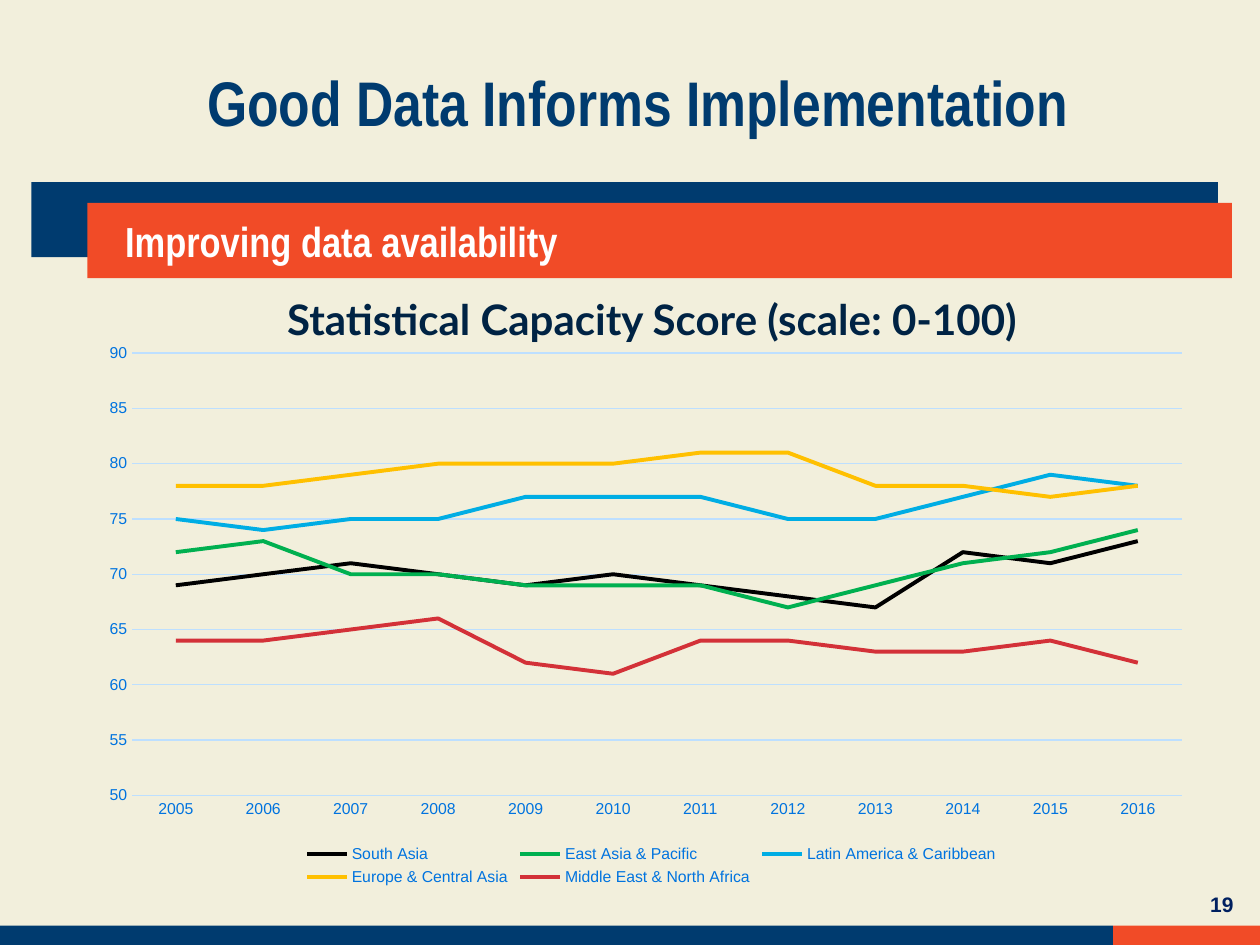
import pptx
import pptx.util
import pptx.chart.data
import pptx.dml.color
import pptx.enum.chart
import pptx.enum.shapes
import pptx.enum.text
import pptx.oxml

Pt = pptx.util.Pt
Align = pptx.enum.text.PP_ALIGN
NAVY, RED, INK, BLUE, PALE = "003B6F", "F14B27", "002344", "0073DF", "BDDFFF"


def rgb(code):
    return pptx.dml.color.RGBColor.from_string(code)


def write(shape, text, face, size, color, align):
    frame = shape.text_frame
    frame.word_wrap = True
    frame.auto_size = pptx.enum.text.MSO_AUTO_SIZE.NONE
    frame.vertical_anchor = pptx.enum.text.MSO_ANCHOR.MIDDLE
    frame.text = text
    para = frame.paragraphs[0]
    para.alignment = align
    font = para.font
    font.name, font.size, font.bold = face, Pt(size), True
    font.color.rgb = rgb(color)


deck = pptx.Presentation()
deck.slide_width, deck.slide_height = Pt(720), Pt(540)
slide = deck.slides.add_slide(deck.slide_layouts[5])
slide.background.fill.solid()
slide.background.fill.fore_color.rgb = rgb("F2EFDC")
shapes = slide.shapes

# Footer and heading bars
bars = []
for left, top, width, height, color in [
    (0, 529, 636, 11, NAVY),
    (636, 529, 84, 11, RED),
    (18, 104, 678, 43, NAVY),
    (50, 116, 654, 43, RED),
]:
    bar = shapes.add_shape(pptx.enum.shapes.MSO_SHAPE.RECTANGLE,
                           Pt(left), Pt(top), Pt(width), Pt(height))
    bar.shadow.inherit = False
    bar.fill.solid()
    bar.fill.fore_color.rgb = rgb(color)
    bar.line.fill.background()
    bars.append(bar)
banner = bars[-1]
write(banner, "Improving data availability", "Arial Narrow", 24, "FFFFFF", Align.LEFT)
banner.text_frame.margin_left = Pt(21.5)

title = shapes.title
title.left, title.top, title.width, title.height = Pt(50), Pt(29), Pt(629), Pt(58)
write(title, "Good Data Informs Implementation", "Arial Narrow", 36, NAVY, Align.CENTER)

# Chart
data = pptx.chart.data.CategoryChartData()
data.categories = [str(year) for year in range(2005, 2017)]
lines = [
    ("South Asia", "000000", [69, 70, 71, 70, 69, 70, 69, 68, 67, 72, 71, 73]),
    ("East Asia & Pacific", "00B050", [72, 73, 70, 70, 69, 69, 69, 67, 69, 71, 72, 74]),
    ("Latin America & Caribbean", "00ADE4", [75, 74, 75, 75, 77, 77, 77, 75, 75, 77, 79, 78]),
    ("Europe & Central Asia", "FFC000", [78, 78, 79, 80, 80, 80, 81, 81, 78, 78, 77, 78]),
    ("Middle East & North Africa", "D33138", [64, 64, 65, 66, 62, 61, 64, 64, 63, 63, 64, 62]),
]
for name, color, scores in lines:
    data.add_series(name, scores)
chart = shapes.add_chart(pptx.enum.chart.XL_CHART_TYPE.LINE,
                         Pt(50), Pt(189), Pt(638), Pt(320), data).chart
chart.has_title = False
chart.font.name, chart.font.size = "Arial", Pt(10)
chart.font.color.rgb = rgb(INK)
for series, (name, color, scores) in zip(chart.plots[0].series, lines):
    series.smooth = False
    series.marker.style = pptx.enum.chart.XL_MARKER_STYLE.NONE
    series.format.line.width = Pt(2.25)
    series.format.line.color.rgb = rgb(color)

years, scale = chart.category_axis, chart.value_axis
scale.minimum_scale, scale.maximum_scale, scale.major_unit = 50, 90, 5
scale.has_major_gridlines = True
scale.format.line.fill.background()
for rule in (years.format.line, scale.major_gridlines.format.line):
    rule.color.rgb = rgb(PALE)
    rule.width = Pt(0.75)
for axis in (years, scale):
    axis.major_tick_mark = axis.minor_tick_mark = pptx.enum.chart.XL_TICK_MARK.NONE

chart.has_legend = True
legend = chart.legend
legend.position = pptx.enum.chart.XL_LEGEND_POSITION.BOTTOM
legend.include_in_layout = False
for font in (years.tick_labels.font, scale.tick_labels.font, legend.font):
    font.name, font.size = "Arial", Pt(9)
    font.color.rgb = rgb(BLUE)

# Fixed places, as fractions of the chart, for plot and legend
space = "http://schemas.openxmlformats.org/drawingml/2006/chart"
area = chart._chartSpace.find(f".//{{{space}}}plotArea")
for part, slot, target, box in [
    (area, 0, '<c:layoutTarget val="inner"/>', (0.04, 0.04, 0.94, 0.79)),
    (legend._element, 1, "", (0.19, 0.91, 0.63, 0.09)),
]:
    for old in part.findall(f"{{{space}}}layout"):
        part.remove(old)
    marks = "".join(f'<c:{key}Mode val="edge"/>' for key in "xy")
    marks += "".join(f'<c:{key} val="{val}"/>' for key, val in zip("xywh", box))
    part.insert(slot, pptx.oxml.parse_xml(
        f'<c:layout xmlns:c="{space}"><c:manualLayout>{target}{marks}'
        "</c:manualLayout></c:layout>"))

head = shapes.add_textbox(Pt(157), Pt(164), Pt(464), Pt(36))
write(head, "Statistical Capacity Score (scale: 0-100)", "Lato", 24, INK, Align.LEFT)
number = shapes.add_textbox(Pt(544), Pt(502), Pt(168), Pt(29))
write(number, "19", "Arial", 12, "002060", Align.RIGHT)

deck.save("out.pptx")
